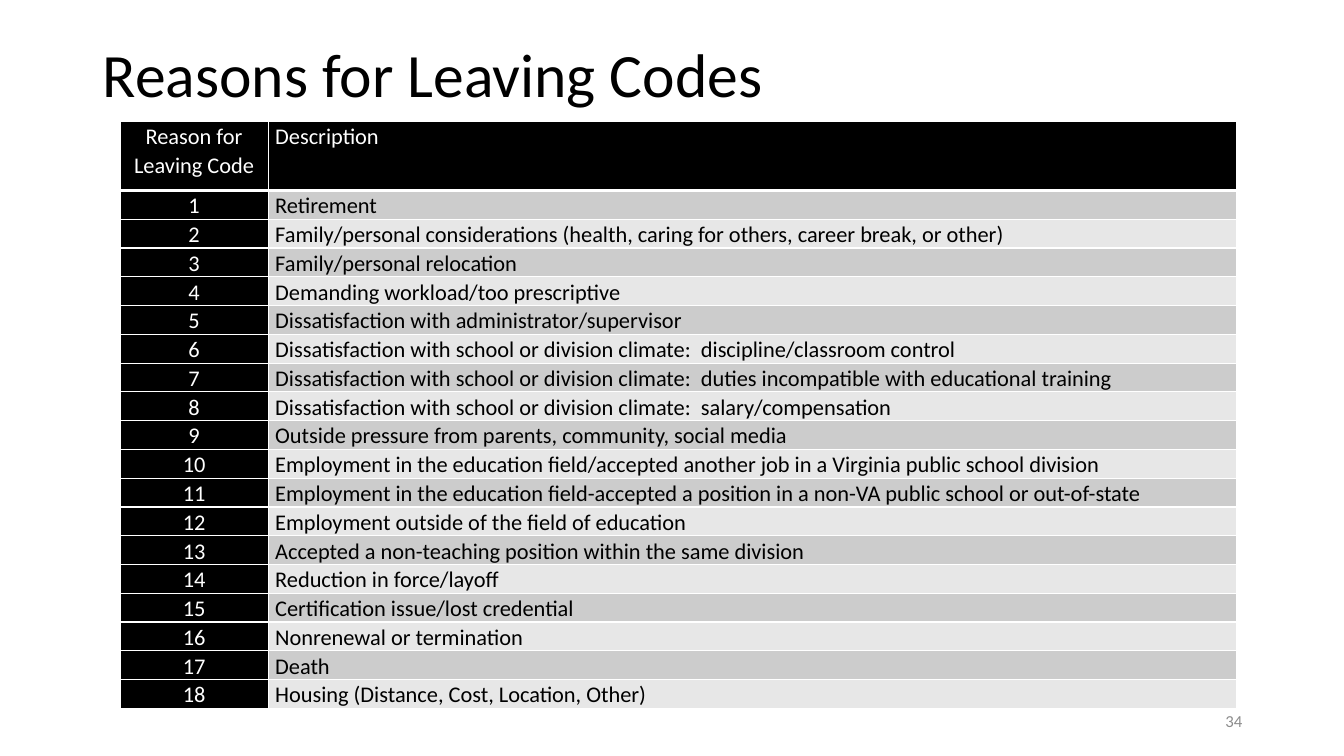
from dataclasses import dataclass

from lxml import etree
from pptx import Presentation
from pptx.dml.color import RGBColor
from pptx.enum.text import MSO_ANCHOR, PP_ALIGN
from pptx.oxml.ns import qn
from pptx.util import Inches, Pt

LEFT, CENTER, RIGHT = PP_ALIGN.LEFT, PP_ALIGN.CENTER, PP_ALIGN.RIGHT
TOP, MIDDLE = MSO_ANCHOR.TOP, MSO_ANCHOR.MIDDLE
TITLE_ONLY_LAYOUT = 5

HEADER = ("Reason for Leaving Code", "Description")
REASONS = (
    "Retirement",
    "Family/personal considerations (health, caring for others, career break, or other)",
    "Family/personal relocation",
    "Demanding workload/too prescriptive",
    "Dissatisfaction with administrator/supervisor",
    "Dissatisfaction with school or division climate:  discipline/classroom control",
    "Dissatisfaction with school or division climate:  duties incompatible with educational training",
    "Dissatisfaction with school or division climate:  salary/compensation",
    "Outside pressure from parents, community, social media",
    "Employment in the education field/accepted another job in a Virginia public school division",
    "Employment in the education field-accepted a position in a non-VA public school or out-of-state",
    "Employment outside of the field of education",
    "Accepted a non-teaching position within the same division",
    "Reduction in force/layoff",
    "Certification issue/lost credential",
    "Nonrenewal or termination",
    "Death",
    "Housing (Distance, Cost, Location, Other)",
)


@dataclass(frozen=True)
class Theme:
    font: str = "Calibri"
    black: str = "000000"
    white: str = "FFFFFF"
    gray: str = "8C8C8C"
    bands: tuple = ("CCCCCC", "E7E7E7")
    title_size: int = 44
    table_size: int = 16
    number_size: int = 12
    border: int = 1
    header_border: int = 3


class SlideBuilder:
    def __init__(self, slide, theme):
        self.slide = slide
        self.theme = theme

    def add_text(self, frame, text, size, color, align=LEFT, spacing=1.0):
        paragraph = frame.paragraphs[0]
        paragraph.alignment = align
        paragraph.line_spacing = spacing
        run = paragraph.add_run()
        run.text = text
        run.font.name = self.theme.font
        run.font.size = Pt(size)
        run.font.color.rgb = RGBColor.from_string(color)

    def title(self, text, left, top, width, height):
        shape = self.slide.shapes.title
        shape.left, shape.top = Inches(left), Inches(top)
        shape.width, shape.height = Inches(width), Inches(height)
        frame = shape.text_frame
        frame.word_wrap = True
        frame.vertical_anchor = MIDDLE
        self.add_text(frame, text, self.theme.title_size, self.theme.black, spacing=0.9)

    def slide_number(self, text, left, top, width, height):
        shape = self.slide.shapes.add_textbox(
            Inches(left), Inches(top), Inches(width), Inches(height))
        frame = shape.text_frame
        frame.word_wrap = True
        frame.vertical_anchor = MIDDLE
        self.add_text(frame, text, self.theme.number_size, self.theme.gray, RIGHT)

    def borders(self, cell, bottom):
        properties = cell._tc.get_or_add_tcPr()
        widths = dict.fromkeys(("lnL", "lnR", "lnT"), self.theme.border)
        widths["lnB"] = bottom
        for position, (side, width) in enumerate(widths.items()):
            line = etree.Element(qn(f"a:{side}"), w=str(Pt(width)))
            fill = etree.SubElement(line, qn("a:solidFill"))
            etree.SubElement(fill, qn("a:srgbClr"), val=self.theme.white)
            properties.insert(position, line)

    def cell(self, cell, text, fill, color, align, bottom):
        cell.margin_left = cell.margin_right = Inches(0.07)
        cell.margin_top = cell.margin_bottom = 0
        cell.vertical_anchor = TOP
        cell.fill.solid()
        cell.fill.fore_color.rgb = RGBColor.from_string(fill)
        self.borders(cell, bottom)
        self.add_text(cell.text_frame, text, self.theme.table_size, color, align, 1.07)

    def table(self, rows, left, top, column_widths, header_height, row_height):
        theme = self.theme
        height = header_height + row_height * (len(rows) - 1)
        table = self.slide.shapes.add_table(
            len(rows), len(column_widths), Inches(left), Inches(top),
            Inches(sum(column_widths)), Inches(height)).table
        for column, width in zip(table.columns, column_widths):
            column.width = Inches(width)
        for row_index, values in enumerate(rows):
            is_header = row_index == 0
            table.rows[row_index].height = Inches(header_height if is_header else row_height)
            bottom = theme.header_border if is_header else theme.border
            for column_index, text in enumerate(values):
                is_dark = is_header or column_index == 0
                fill = theme.black if is_dark else theme.bands[(row_index - 1) % 2]
                color = theme.white if is_dark else theme.black
                align = CENTER if column_index == 0 else LEFT
                self.cell(table.cell(row_index, column_index), text, fill, color, align, bottom)


def main():
    presentation = Presentation()
    presentation.slide_width = Inches(13.33)
    presentation.slide_height = Inches(7.5)
    slide = presentation.slides.add_slide(presentation.slide_layouts[TITLE_ONLY_LAYOUT])
    builder = SlideBuilder(slide, Theme())
    builder.title("Reasons for Leaving Codes", 0.92, 0.04, 11.5, 1.45)
    builder.slide_number("34", 9.42, 6.95, 3, 0.4)
    rows = [HEADER] + [(str(code), reason) for code, reason in enumerate(REASONS, 1)]
    builder.table(rows, 1.19, 1.2, (1.47, 9.6), 0.69, 0.28)
    presentation.save("out.pptx")


if __name__ == "__main__":
    main()
